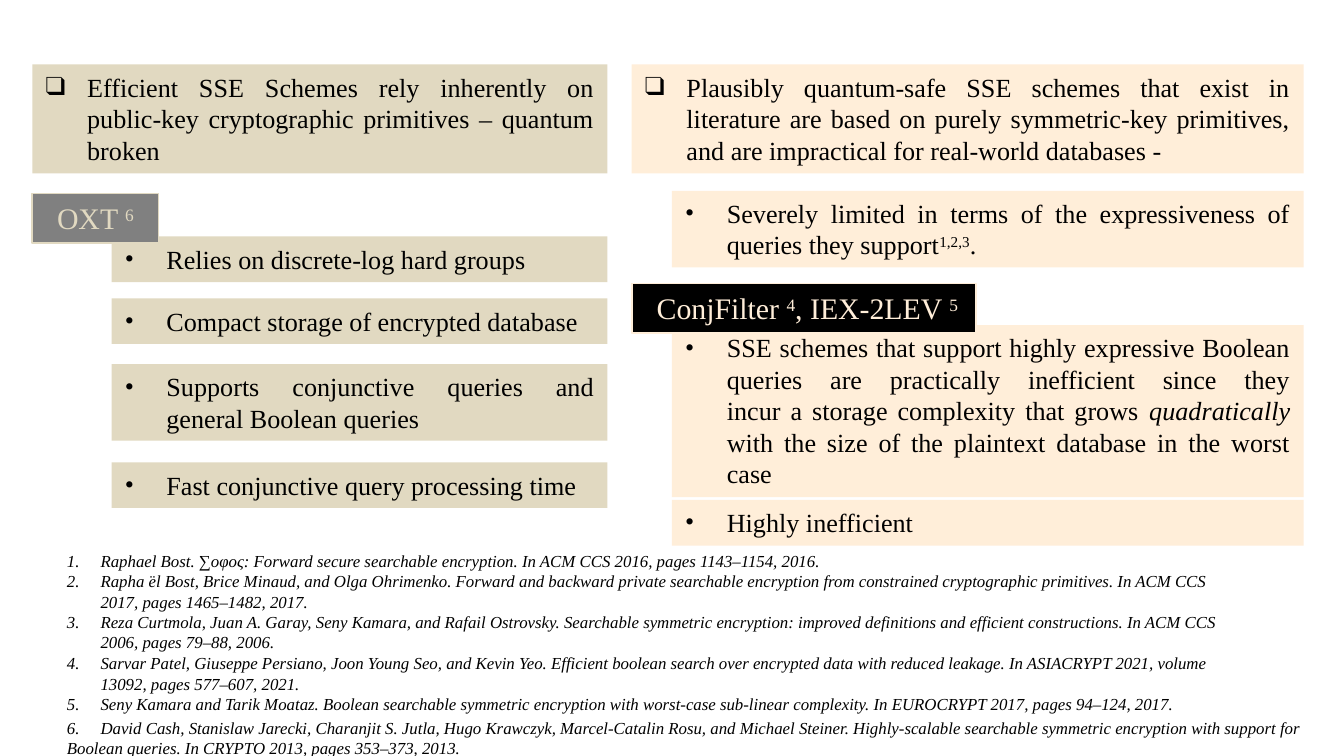
from lxml import etree
from pptx import Presentation
from pptx.dml.color import RGBColor
from pptx.enum.shapes import MSO_SHAPE
from pptx.enum.text import MSO_ANCHOR, MSO_AUTO_SIZE, PP_ALIGN
from pptx.oxml.ns import qn
from pptx.util import Inches, Pt

RECT = MSO_SHAPE.RECTANGLE
TOP = MSO_ANCHOR.TOP
GROW = MSO_AUTO_SIZE.SHAPE_TO_FIT_TEXT
LEFT, CENTER, JUSTIFY = PP_ALIGN.LEFT, PP_ALIGN.CENTER, PP_ALIGN.JUSTIFY

FONT = "Times New Roman"
BLACK, GRAY, TAN, PEACH = "000000", "808080", "E1D9C1", "FFEED9"
BODY = {"name": FONT, "size": Pt(14)}
LABEL = {"name": FONT, "size": Pt(16)}
NOTE = {"name": FONT, "size": Pt(9), "italic": True}
SUP, ITALIC = "sup", "italic"

# Claims: (top, height, runs); a run is (text, style)
SCHEMES = [
    (1.76, 0.34, [("Relies on discrete-log hard groups", None)]),
    (2.22, 0.34, [("Compact storage of encrypted database", None)]),
    (2.71, 0.57, [("Supports conjunctive queries and general Boolean queries", None)]),
    (3.44, 0.34, [("Fast conjunctive query processing time", None)]),
]
LIMITS = [
    (1.42, 0.57, [
        ("Severely limited in terms of the expressiveness of queries they support", None),
        ("1,2,3", SUP), (".", None)]),
    (2.42, 1.28, [
        ("SSE schemes that support highly expressive Boolean queries are "
         "practically inefficient since they\vincur a storage complexity that grows ", None),
        ("quadratically", ITALIC),
        (" with the size of the plaintext database in the worst case", None)]),
    (3.72, 0.34, [("Highly inefficient", None)]),
]
EARLY = [
    "Raphael Bost. ∑oφoς: Forward secure searchable encryption. In ACM CCS 2016, "
    "pages 1143–1154, 2016.",
    "Rapha ̈el Bost, Brice Minaud, and Olga Ohrimenko. Forward and backward private "
    "searchable encryption from constrained cryptographic primitives. In ACM CCS 2017, "
    "pages 1465–1482, 2017.",
    "Reza Curtmola, Juan A. Garay, Seny Kamara, and Rafail Ostrovsky. Searchable "
    "symmetric encryption: improved definitions and efficient constructions. In ACM CCS "
    "2006, pages 79–88, 2006.",
]
LATER = [
    "Sarvar Patel, Giuseppe Persiano, Joon Young Seo, and Kevin Yeo. Efficient boolean "
    "search over encrypted data with reduced leakage. In ASIACRYPT 2021, volume 13092, "
    "pages 577–607, 2021.",
    "Seny Kamara and Tarik Moataz. Boolean searchable symmetric encryption with "
    "worst-case sub-linear complexity. In EUROCRYPT 2017, pages 94–124, 2017.",
]
LAST = ("6.\tDavid Cash, Stanislaw Jarecki, Charanjit S. Jutla, Hugo Krawczyk, "
        "Marcel-Catalin Rosu, and Michael Steiner. Highly-scalable searchable symmetric "
        "encryption with support for Boolean queries. In CRYPTO 2013, pages 353–373, 2013.")


def color(code):
    return RGBColor.from_string(code)


def set_frame(shape, side=0.1):
    frame = shape.text_frame
    look = {"word_wrap": True, "auto_size": GROW, "vertical_anchor": TOP,
            "margin_left": Inches(side), "margin_right": Inches(side)}
    for key, value in look.items():
        setattr(frame, key, value)
    return frame


def write(para, runs, look, ink=BLACK, align=LEFT):
    para.alignment = align
    for text, style in runs:
        for num, part in enumerate(text.split("\v")):
            if num:
                para.add_line_break()
            run = para.add_run()
            run.text = part
            for key, value in look.items():
                setattr(run.font, key, value)
            run.font.color.rgb = color(ink)
            if style == ITALIC:
                run.font.italic = True
            elif style == SUP:
                run.font._element.set("baseline", "30000")


def set_mark(para, indent, tag, **attrs):
    """Give a paragraph a hanging indent and a bullet or number."""
    props = para._p.get_or_add_pPr()
    props.set("marL", str(Inches(indent)))
    props.set("indent", str(-Inches(indent)))
    tint = etree.SubElement(props, qn("a:buClr"))
    etree.SubElement(tint, qn("a:srgbClr"), val=BLACK)
    etree.SubElement(props, qn("a:buFont"), typeface=FONT)
    etree.SubElement(props, qn("a:" + tag), **attrs)


def add_panel(slide, box, fill, line=None):
    panel = slide.shapes.add_shape(RECT, *map(Inches, box))
    panel.shadow.inherit = False
    panel.fill.solid()
    panel.fill.fore_color.rgb = color(fill)
    if line:
        panel.line.color.rgb = color(line)
        panel.line.width = Pt(1)
    else:
        panel.line.fill.background()
    return panel


def add_claim(slide, box, fill, runs, mark="•"):
    para = set_frame(add_panel(slide, box, fill)).paragraphs[0]
    write(para, runs, BODY, align=JUSTIFY)
    set_mark(para, 0.31, "buChar", char=mark)


def add_label(slide, box, fill, ink, runs):
    frame = set_frame(add_panel(slide, box, fill, ink), 0.05)
    write(frame.paragraphs[0], runs, LABEL, ink, CENTER)


def add_column(slide, box, inset, fill, head, claims):
    """Place a heading in the box and claims below it, inset from its left."""
    left, _, width, _ = box
    add_claim(slide, box, fill, [(head, None)], "❑")
    for top, height, runs in claims:
        add_claim(slide, (left + inset, top, width - inset, height), fill, runs)


def add_refs(slide, box, items, start):
    frame = set_frame(slide.shapes.add_textbox(*map(Inches, box)))
    for num, item in enumerate(items):
        para = frame.add_paragraph() if num else frame.paragraphs[0]
        write(para, [(item, None)], NOTE)
        set_mark(para, 0.25, "buAutoNum", type="arabicPeriod", startAt=str(start))


def add_last(slide, box):
    """Place the final reference, whose second line starts at the margin."""
    frame = set_frame(slide.shapes.add_textbox(*map(Inches, box)))
    para = frame.paragraphs[0]
    write(para, [(LAST, None)], NOTE)
    tabs = etree.SubElement(para._p.get_or_add_pPr(), qn("a:tabLst"))
    etree.SubElement(tabs, qn("a:tab"), pos=str(Inches(0.25)), algn="l")


def main():
    deck = Presentation()
    deck.slide_width = Inches(10)
    deck.slide_height = deck.slide_width * 9 // 16
    slide = deck.slides.add_slide(deck.slide_layouts[6])
    add_column(slide, (4.7, 0.48, 5, 0.81), 0.3, PEACH,
               "Plausibly quantum-safe SSE schemes that exist in literature are based on "
               "purely symmetric-key primitives, and are impractical for real-world "
               "databases -", LIMITS)
    add_column(slide, (0.24, 0.48, 4.28, 0.81), 0.59, TAN,
               "Efficient SSE Schemes rely inherently on public-key cryptographic "
               "primitives – quantum broken", SCHEMES)
    add_refs(slide, (0.4, 4.05, 8.84, 0.86), EARLY, 1)
    add_refs(slide, (0.4, 4.81, 8.84, 0.71), LATER, 4)
    add_last(slide, (0.4, 5.29, 9.46, 0.4))
    add_label(slide, (0.24, 1.44, 0.94, 0.37), GRAY, TAN, [("OXT ", None), ("6", SUP)])
    add_label(slide, (4.7, 2.11, 2.56, 0.37), BLACK, PEACH,
              [(" ConjFilter ", None), ("4", SUP), (", IEX-2LEV ", None), ("5", SUP)])
    deck.save("out.pptx")


if __name__ == "__main__":
    main()
